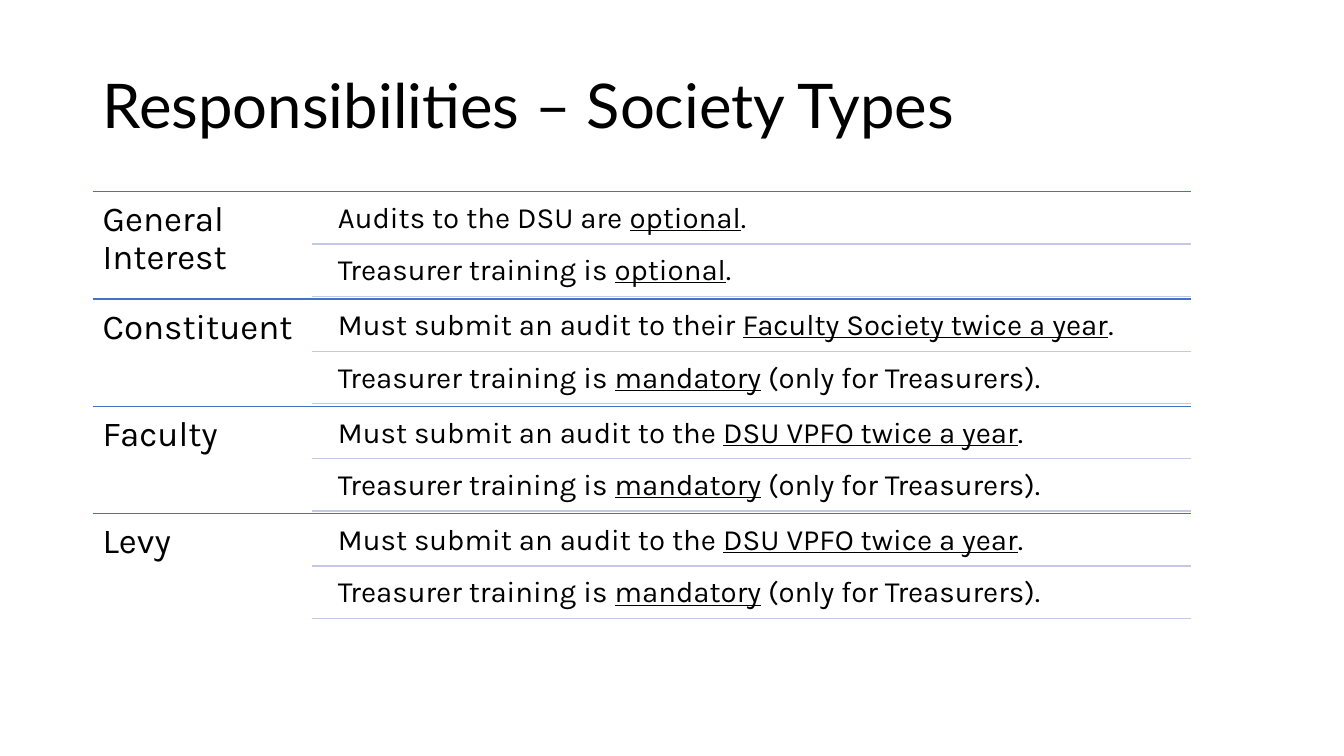
import pptx
import pptx.util
import pptx.dml.color
import pptx.enum.shapes
import pptx.enum.text
import pptx.oxml
from dataclasses import dataclass


@dataclass(frozen=True)
class Theme:
    text: str = "000000"
    group_rule: str = "4472C4"
    duty_rule: str = "C1C9E4"
    title_font: str = "Lato"
    body_font: str = "Karla"
    title_size: int = 44
    group_size: int = 25
    duty_size: int = 21
    rule_width: int = 1


THEME = Theme()
TRAINING = ("Treasurer training is ", "mandatory", " (only for Treasurers).")
VPFO_AUDIT = ("Must submit an audit to the ", "DSU VPFO twice a year", ".")
SOCIETIES = [
    ("General Interest", [("Audits to the DSU are ", "optional", "."),
                          ("Treasurer training is ", "optional", ".")]),
    ("Constituent", [("Must submit an audit to their ",
                      "Faculty Society twice a year", "."), TRAINING]),
    ("Faculty", [VPFO_AUDIT, TRAINING]),
    ("Levy", [VPFO_AUDIT, TRAINING]),
]


def inches(*lengths):
    return [pptx.util.Inches(n) for n in lengths]


def add_rule(slide, left, right, y, color):
    line = slide.shapes.add_connector(
        pptx.enum.shapes.MSO_CONNECTOR.STRAIGHT, *inches(left, y, right, y))
    line.line.color.rgb = pptx.dml.color.RGBColor.from_string(color)
    line.line.width = pptx.util.Pt(THEME.rule_width)
    line._element.spPr.append(pptx.oxml.parse_xml(
        '<a:effectLst xmlns:a="http://schemas.openxmlformats.org/drawingml/2006/main"/>'))


def add_text(slide, box, parts, font, size, inset):
    tf = slide.shapes.add_textbox(*inches(*box)).text_frame
    tf.word_wrap = True
    tf.margin_left, tf.margin_top, tf.margin_right, tf.margin_bottom = inches(*[inset] * 4)
    p = tf.paragraphs[0]
    p.line_spacing = 0.9
    for i, part in enumerate(parts):
        r = p.add_run()
        r.text = part
        r.font.name = font
        r.font.size = pptx.util.Pt(size)
        r.font.color.rgb = pptx.dml.color.RGBColor.from_string(THEME.text)
        if i == 1:
            r.font.underline = True
    return tf


def add_title(slide, box, title):
    tf = add_text(slide, box, [title], THEME.title_font, THEME.title_size, 0.1)
    tf.vertical_anchor = pptx.enum.text.MSO_ANCHOR.MIDDLE


def add_society(slide, box, name, duties):
    left, top, width, height = box
    right = left + width
    name_width = width * 0.2
    duty_left = left + width * 0.215
    gap = height * 0.0235
    pitch = (height - gap) / len(duties)
    add_rule(slide, left, right, top, THEME.group_rule)
    add_text(slide, (left, top, name_width, height), [name],
             THEME.body_font, THEME.group_size, 0.1)
    for i, duty in enumerate(duties):
        y = top + i * pitch
        add_text(slide, (duty_left, y + gap, right - duty_left, pitch - gap),
                 duty, THEME.body_font, THEME.duty_size, 0.09)
        add_rule(slide, left + name_width, right, y + pitch, THEME.duty_rule)


def add_societies(slide, box, societies):
    left, top, width, height = box
    step = height / len(societies)
    for i, (name, duties) in enumerate(societies):
        add_society(slide, (left, top + i * step, width, step), name, duties)


def main():
    prs = pptx.Presentation()
    prs.slide_width, prs.slide_height = inches(13.33, 7.5)
    slide = prs.slides.add_slide(prs.slide_layouts[6])
    add_title(slide, (0.92, 0.35, 10.9, 1.45), "Responsibilities – Society Types")
    add_societies(slide, (0.92, 1.9, 10.89, 4.26), SOCIETIES)
    prs.save("out.pptx")


if __name__ == "__main__":
    main()
